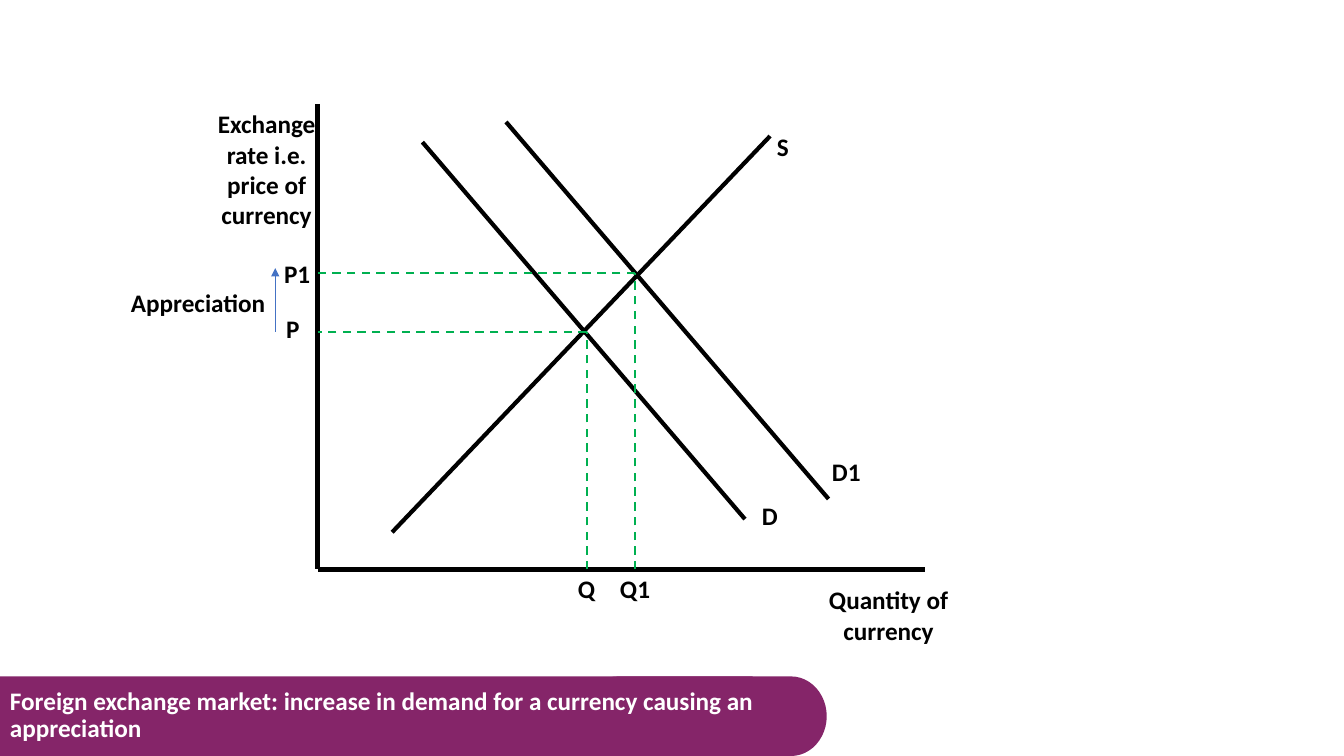
from lxml import etree
from pptx import Presentation
from pptx.dml.color import RGBColor
from pptx.enum.dml import MSO_LINE
from pptx.enum.shapes import MSO_CONNECTOR, MSO_SHAPE
from pptx.enum.text import MSO_ANCHOR, PP_ALIGN
from pptx.oxml.ns import qn
from pptx.util import Inches, Pt

STRAIGHT = MSO_CONNECTOR.STRAIGHT
RECTANGLE = MSO_SHAPE.RECTANGLE
ROUNDED_END = MSO_SHAPE.FLOWCHART_STORED_DATA
DASH = MSO_LINE.DASH
LEFT, CENTER = PP_ALIGN.LEFT, PP_ALIGN.CENTER
TOP, MIDDLE = MSO_ANCHOR.TOP, MSO_ANCHOR.MIDDLE

BLACK, WHITE, PURPLE, GREEN, BLUE = "000000", "FFFFFF", "852569", "00B050", "4472C4"


def color(hex_text):
    return RGBColor.from_string(hex_text)


class DiagramSlide:
    """Draws on one slide; all lengths are percentages of its width and height."""

    font_format = {"name": "Calibri", "size": Pt(18), "bold": True}

    def __init__(self, presentation):
        self.slide = presentation.slides.add_slide(presentation.slide_layouts[6])
        self.width = presentation.slide_width
        self.height = presentation.slide_height

    def scale(self, *lengths):
        """Turn alternating horizontal and vertical shares into slide units."""
        sides = (self.width, self.height) * 2
        return [round(side * length / 100) for side, length in zip(sides, lengths)]

    def line(self, start, end, line_color=BLACK, weight=3, dash=None, arrow=False):
        connector = self.slide.shapes.add_connector(STRAIGHT, *self.scale(*start, *end))
        connector.line.color.rgb = color(line_color)
        line_format = {"width": Pt(weight), "dash_style": dash}
        for name, value in line_format.items():
            setattr(connector.line, name, value)
        if arrow:
            outline = connector.line._get_or_add_ln()
            etree.SubElement(outline, qn("a:tailEnd"), type="triangle")
        etree.SubElement(connector._element.spPr, qn("a:effectLst"))

    def block(self, kind, box, fill, rotation=0):
        shape = self.slide.shapes.add_shape(kind, *self.scale(*box))
        shape.shadow.inherit = False
        shape.fill.solid()
        shape.fill.fore_color.rgb = color(fill)
        shape.line.fill.background()
        shape.rotation = rotation

    def text(self, words, box, alignment=CENTER, anchor=TOP, text_color=BLACK, spacing=1.0):
        frame = self.slide.shapes.add_textbox(*self.scale(*box)).text_frame
        frame.word_wrap = True
        frame.vertical_anchor = anchor
        paragraph = frame.paragraphs[0]
        paragraph.text = words
        paragraph.alignment = alignment
        paragraph.line_spacing = spacing
        font = paragraph.runs[0].font
        for name, value in self.font_format.items():
            setattr(font, name, value)
        font.color.rgb = color(text_color)


def draw_banner(diagram):
    top, height = 89.47, 10.53
    diagram.block(RECTANGLE, (0, top, 56, height), PURPLE)
    diagram.block(ROUNDED_END, (45.53, top, 15.98, height), PURPLE, rotation=180)
    diagram.text(
        "Foreign exchange market: increase in demand for a currency causing an appreciation",
        (0, top, 59.03, height), LEFT, MIDDLE, WHITE, 0.9)


def draw_market(diagram):
    axis_x, axis_y = 23.63, 75.33
    axis_top, axis_right = 13.73, 68.85
    label_width, label_height = 9.38, 5.33

    diagram.line((axis_x, axis_top), (axis_x, axis_y))
    diagram.line((axis_x, axis_y), (axis_right, axis_y))
    diagram.text("Exchange rate i.e. price of currency", (15.15, axis_top, label_width, 17.47))
    diagram.text("Quantity of currency", (60.9, 76.67, 10.43, 9.47))

    demand_start, demand_end = (31.43, 18.8), (55.43, 68.67)
    shift_x, shift_y = 6.22, -2.67
    curves = [
        ("D", demand_start, demand_end, (52.58, 65.47)),
        ("S", (57.3, 18), (29.18, 70.4), (53.55, 16.67)),
        ("D1", (demand_start[0] + shift_x, demand_start[1] + shift_y),
         (demand_end[0] + shift_x, demand_end[1] + shift_y), (58.28, 59.73)),
    ]
    for name, start, end, label in curves:
        diagram.line(start, end)
        diagram.text(name, (*label, label_width, label_height))

    price, new_price = 43.87, 36.13
    equilibria = [
        ("P", "Q", 43.65, price, (20.55, 40.8)),
        ("P1", "Q1", 47.25, new_price, (20.4, 33.47)),
    ]
    quantity_width = 4.5
    for price_name, quantity_name, quantity, level, price_label in equilibria:
        for start, end in (((quantity, level), (axis_x, level)),
                           ((quantity, axis_y), (quantity, level))):
            diagram.line(start, end, GREEN, 1.5, DASH)
        diagram.text(price_name, (*price_label, quantity_width, label_height), LEFT)
        diagram.text(quantity_name, (quantity - quantity_width / 2, 75.2,
                                     quantity_width, label_height))

    arrow_x = 20.48
    diagram.line((arrow_x, price), (arrow_x, 35.47), BLUE, 0.5, arrow=True)
    diagram.text("Appreciation", (9, 37.33, 11.48, label_height))


def main():
    presentation = Presentation()
    presentation.slide_width = Inches(13.33)
    presentation.slide_height = Inches(7.5)
    diagram = DiagramSlide(presentation)
    draw_banner(diagram)
    draw_market(diagram)
    presentation.save("out.pptx")


if __name__ == "__main__":
    main()
